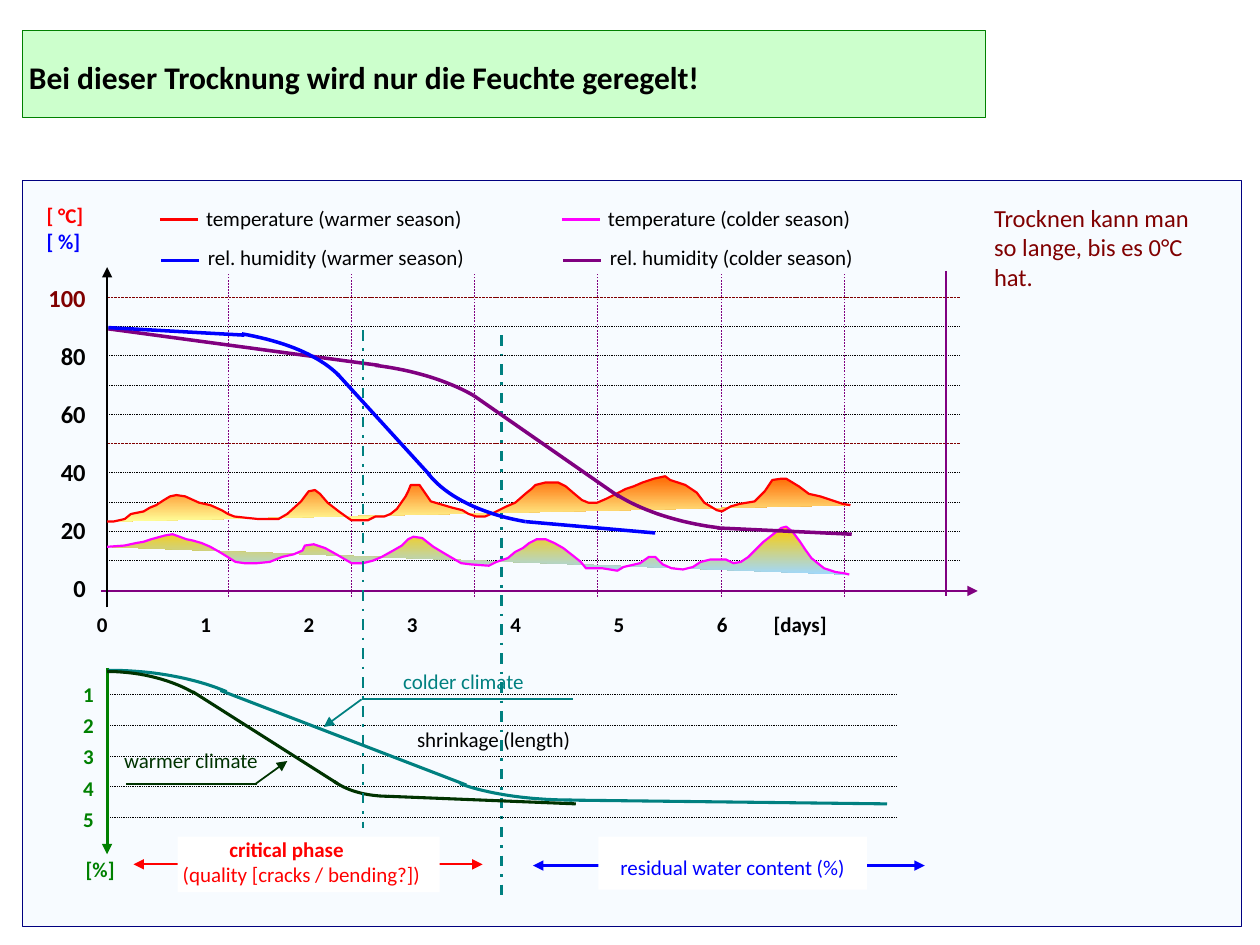
from lxml import etree
from pptx import Presentation
from pptx.dml.color import RGBColor
from pptx.enum.dml import MSO_LINE
from pptx.enum.shapes import MSO_CONNECTOR, MSO_SHAPE
from pptx.enum.text import MSO_ANCHOR, PP_ALIGN
from pptx.oxml.ns import qn
from pptx.util import Inches, Pt

STRAIGHT, RECT = MSO_CONNECTOR.STRAIGHT, MSO_SHAPE.RECTANGLE
DOT, SHORT = MSO_LINE.ROUND_DOT, MSO_LINE.SQUARE_DOT
DASH, MIXED = MSO_LINE.DASH, MSO_LINE.DASH_DOT
LEFT, RIGHT, CENTER = PP_ALIGN.LEFT, PP_ALIGN.RIGHT, PP_ALIGN.CENTER
TOP, MIDDLE = MSO_ANCHOR.TOP, MSO_ANCHOR.MIDDLE
BLACK, WHITE, RED, BLUE = "000000", "FFFFFF", "FF0000", "0000FF"
PINK, PURPLE, MAROON = "FF00FF", "800080", "800000"
TEAL, GREEN, FOREST = "008080", "008000", "003300"

COLD = [
    (85, 434), (99, 433), (108, 431), (114, 430), (120, 428), (131, 425), (137, 424),
    (148, 428), (153, 429), (160, 431), (167, 434), (174, 438), (179, 441), (187, 446),
    (194, 447), (204, 447), (214, 446), (224, 442), (233, 440), (240, 437), (242, 433),
    (249, 432), (258, 435), (267, 440), (279, 447), (288, 447), (296, 445), (303, 442),
    (312, 437), (319, 433), (324, 428), (328, 426), (335, 427), (344, 434), (354, 440),
    (366, 447), (374, 448), (388, 449), (394, 446), (403, 443), (409, 438), (415, 435),
    (420, 431), (426, 428), (433, 428), (440, 431), (447, 435), (456, 442), (461, 446),
    (465, 451), (472, 451), (478, 451), (490, 453), (495, 450), (508, 447), (515, 442),
    (520, 442), (526, 448), (533, 451), (542, 452), (550, 450), (556, 446), (564, 444),
    (571, 444), (576, 444), (582, 447), (588, 446), (594, 442), (599, 437), (606, 430),
    (615, 423), (620, 419), (624, 418), (629, 422), (635, 430), (639, 436), (644, 443),
    (654, 451), (663, 454), (670, 455), (674, 456)]
WARM = [
    (85, 414), (90, 414), (99, 412), (104, 408), (114, 406), (119, 403), (124, 401),
    (130, 397), (135, 394), (140, 393), (147, 394), (158, 399), (167, 401), (176, 405),
    (181, 408), (186, 410), (195, 411), (205, 412), (211, 412), (221, 412), (228, 408),
    (239, 398), (245, 390), (250, 389), (254, 392), (260, 399), (269, 406), (276, 411),
    (279, 413), (292, 413), (298, 410), (305, 410), (310, 408), (315, 404), (322, 394),
    (324, 390), (326, 385), (333, 385), (342, 398), (359, 403), (367, 405), (372, 408),
    (378, 410), (385, 410), (392, 407), (402, 402), (409, 399), (417, 392), (422, 388),
    (425, 385), (433, 383), (443, 383), (449, 386), (456, 392), (462, 397), (467, 399),
    (474, 399), (481, 396), (489, 392), (497, 388), (503, 386), (510, 383), (519, 380),
    (528, 378), (532, 381), (544, 385), (553, 391), (559, 399), (569, 405), (573, 406),
    (580, 402), (587, 400), (599, 398), (607, 390), (613, 381), (620, 380), (624, 380),
    (634, 386), (642, 392), (651, 394), (660, 397), (669, 400), (675, 401)]
TRENDS = [
    (PURPLE, 2, [
        [(86, 261), (301, 290)], [(298, 290), (330, 294), (357, 303), (376, 314)],
        [(376, 314), (491, 394)], [(571, 419), (538, 415), (509, 405), (490, 393)],
        [(569, 419), (676, 424)]]),
    (BLUE, 2, [
        [(86, 260), (194, 266)], [(192, 265), (226, 271), (253, 282), (269, 298)],
        [(268, 297), (341, 377)], [(417, 414), (382, 408), (354, 394), (340, 376)],
        [(417, 414), (520, 423)]]),
    (TEAL, 1.75, [
        [(86, 532), (121, 532), (154, 538), (180, 549)], [(175, 548), (370, 623)],
        [(454, 635), (419, 635), (387, 630), (365, 622)], [(452, 635), (704, 638)]]),
    (FOREST, 1.75, [
        [(85, 533), (110, 533), (135, 539), (154, 550)], [(153, 549), (268, 622)],
        [(309, 632), (292, 632), (276, 628), (265, 620)], [(308, 632), (457, 638)]])]
LEGEND = [
    (127, 174, RED, 163.5, "temperature (warmer season)"),
    (128, 207, BLUE, 165, "rel. humidity (warmer season)"),
    (446, 174, PINK, 482.5, "temperature (colder season)"),
    (447, 207, PURPLE, 484, "rel. humidity (colder season)")]


def paint(code):
    return RGBColor.from_string(code)


def write(frame, *parts, size=12, color=BLACK, bold=False, align=LEFT, gap=0,
          indent=0, anchor=TOP, inset=(0, 0, 0, 0), tabs=()):
    frame.word_wrap, frame.vertical_anchor = True, anchor
    (frame.margin_left, frame.margin_top,
     frame.margin_right, frame.margin_bottom) = map(Inches, inset)
    base = dict(size=size, color=color, bold=bold, align=align, gap=gap, indent=indent)
    for n, part in enumerate(parts):
        words, change = (part, {}) if isinstance(part, str) else part
        look = {**base, **change}
        para = frame.add_paragraph() if n else frame.paragraphs[0]
        para.alignment, para.space_after = look["align"], Pt(look["gap"])
        run = para.add_run()
        run.text = words
        font = run.font
        font.name, font.size, font.bold = "Calibri", Pt(look["size"]), look["bold"]
        font.color.rgb = paint(look["color"])
        props = para._p.get_or_add_pPr()
        props.set("marL", str(Inches(look["indent"])))
        if tabs:
            stops = etree.SubElement(props, qn("a:tabLst"))
            for tab in tabs:
                etree.SubElement(stops, qn("a:tab"), pos=str(Inches(tab)), algn="l")


class Board:
    """Draws on one slide with a grid of 1000 columns and 750 rows."""

    def __init__(self, deck):
        self.shapes = deck.slides.add_slide(deck.slide_layouts[6]).shapes
        self.col, self.row = deck.slide_width / 1000, deck.slide_height / 750

    def spot(self, x, y):
        return round(x * self.col), round(y * self.row)

    def stroke(self, line, color, width):
        line.color.rgb, line.width = paint(color), Pt(width)

    def text(self, x, y, w, h, *parts, **look):
        box = self.shapes.add_textbox(*self.spot(x, y), *self.spot(w, h))
        write(box.text_frame, *parts, **look)

    def box(self, x, y, w, h, fill, *parts, edge=None, width=1, **look):
        box = self.shapes.add_shape(RECT, *self.spot(x, y), *self.spot(w, h))
        box.shadow.inherit = False
        box.fill.solid()
        box.fill.fore_color.rgb = paint(fill)
        if edge:
            self.stroke(box.line, edge, width)
        else:
            box.line.fill.background()
        if parts:
            write(box.text_frame, *parts, **look)

    def line(self, start, end, color, width, dash=None, ends=()):
        link = self.shapes.add_connector(STRAIGHT, *self.spot(*start), *self.spot(*end))
        self.stroke(link.line, color, width)
        if dash:
            link.line.dash_style = dash
        for end in ends:
            etree.SubElement(link.line._get_or_add_ln(), qn(f"a:{end}End"), type="triangle")
        etree.SubElement(link._element.spPr, qn("a:effectLst"))

    def trace(self, points, color, width, blend=None):
        first, *rest = [self.spot(*point) for point in points]
        pen = self.shapes.build_freeform(*first)
        pen.add_line_segments(rest, close=False)
        form = pen.convert_to_shape()
        form.shadow.inherit = False
        self.stroke(form.line, color, width)
        if not blend:
            form.fill.background()
            return
        form.fill.gradient()
        form.fill.gradient_angle = 270
        for stop, shade in zip(form.fill.gradient_stops, blend):
            stop.color.rgb = paint(shade)

    def curve(self, knots, color, width, steps=20):
        points = []
        for n in range(steps + 1):
            t = n / steps
            parts = (1 - t) ** 3, 3 * t * (1 - t) ** 2, 3 * t * t * (1 - t), t ** 3
            points.append([sum(p * v for p, v in zip(parts, axis)) for axis in zip(*knots)])
        self.trace(points, color, width)


def main():
    deck = Presentation()
    deck.slide_width, deck.slide_height = Inches(10), Inches(7.5)
    board = Board(deck)
    board.box(18, 143, 967, 592, "F7FBFF", edge="000080", width=0.25)
    board.line((398, 266), (398, 716), TEAL, 1.5, MIXED)

    units = [("[ °C]", dict(color=RED)), ("[ %]", dict(color=BLUE, gap=17))]
    marks = [(str(n), dict(size=14, align=RIGHT, gap=16.4,
                           color=MAROON if n == 100 else BLACK))
             for n in range(100, -1, -20)]
    board.text(37, 161, 31, 355, *units, *marks, bold=True)
    days = "\t".join([*map(str, range(7)), "[days]"])
    board.text(77, 485, 704, 28, days, bold=True,
               tabs=[0.82 * n for n in range(1, 7)] + [5.37])

    for n in range(10):
        y = 236 + 23.2 * n
        color, dash = (BLACK, DOT) if n % 5 else (MAROON, SHORT)
        board.line((85, y), (762, y), color, 0.5, dash)
    for n in range(6):
        x = 181 + 97.8 * n
        board.line((x, 474), (x, 217), PURPLE, 0.25, DASH)
    for n in range(5):
        y = 551 + 24.5 * n
        board.line((86, y), (712, y), BLACK, 0.5, DOT)
    board.line((80, 469), (776, 469), PURPLE, 1.5, ends=["tail"])
    board.line((85, 482), (85, 212), BLACK, 1.25, ends=["tail"])
    board.line((751, 215), (751, 473), PURPLE, 1)
    board.line((85, 530), (85, 678), GREEN, 1.75, ends=["tail"])
    board.text(66, 541, 23, 131, *map(str, range(1, 6)), color=GREEN, bold=True, gap=3.4)
    board.text(68, 680, 38, 26, "[%]", color=GREEN, bold=True)

    board.line((106, 686), (383, 686), RED, 1.25, ends=["head", "tail"])
    board.line((423, 687), (734, 687), BLUE, 1.25, ends=["head", "tail"])
    board.box(141, 664, 208, 44, WHITE,
              ("critical phase", dict(bold=True, indent=0.37)),
              "(quality [cracks / bending?])", color=RED, inset=(0.04, 0, 0, 0))
    board.box(475, 664, 213, 42, WHITE, "residual water content (%)",
              color=BLUE, align=CENTER, inset=(0, 0.14, 0, 0))

    board.trace(COLD, PINK, 1.25, ("FFCC00", "9FD8FF"))
    board.trace(WARM, RED, 1.25, ("FF6600", "FFFF99"))
    for color, width, pieces in TRENDS:
        for piece in pieces:
            draw = board.curve if len(piece) == 4 else board.line
            draw(piece, color, width) if draw == board.curve else draw(*piece, color, width)
    for x, y, color, left, label in LEGEND:
        board.line((x, y), (x + 30, y), color, 1.75)
        board.text(left, 163 if y < 200 else 194, 225, 22, label)

    board.line((288, 262), (288, 657), TEAL, 1.5, MIXED)
    board.line((287, 555), (257, 577), TEAL, 1, ends=["tail"])
    board.line((287, 555), (455, 555), TEAL, 1)
    board.line((203, 622), (228, 604), FOREST, 1, ends=["tail"])
    board.line((100, 622), (204, 622), FOREST, 1)
    board.text(320, 531, 118, 30, "colder climate", color=TEAL)
    board.text(98.5, 593, 127, 30, "warmer climate", color=FOREST)
    board.text(331, 577, 145, 23, "shrinkage (length)")
    board.text(789, 161, 176, 112, "Trocknen kann man so lange, bis es 0°C hat.",
               size=14, color=MAROON)
    board.box(18, 24, 764, 69, "CCFFCC", "Bei dieser Trocknung wird nur die Feuchte geregelt!",
              edge=GREEN, width=0.75, size=18, bold=True, anchor=MIDDLE,
              inset=(0.05, 0.1, 0.05, 0.05))
    deck.save("out.pptx")


if __name__ == "__main__":
    main()
